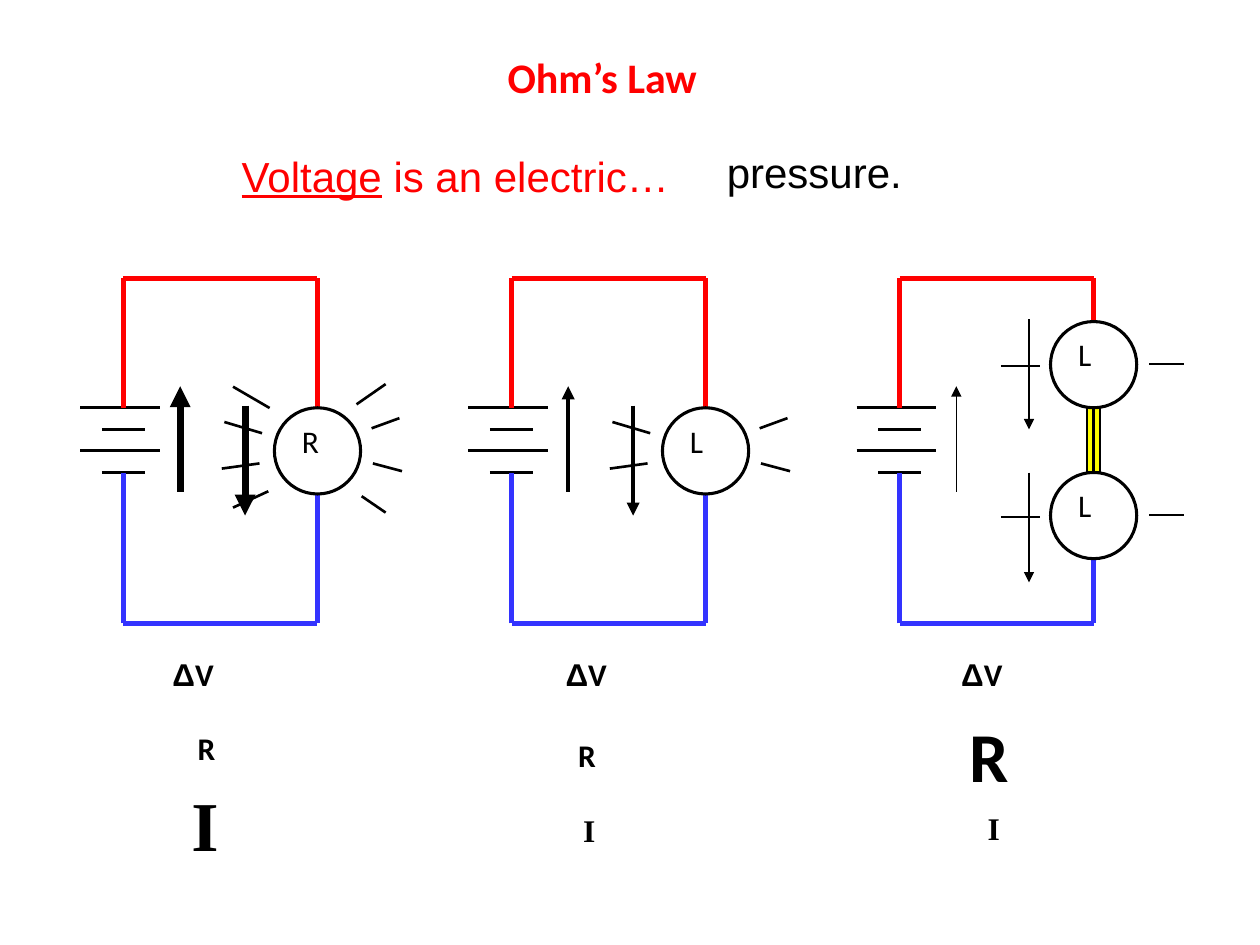
from lxml.etree import SubElement
from pptx import Presentation
from pptx.dml.color import RGBColor
from pptx.enum.shapes import MSO_CONNECTOR, MSO_SHAPE
from pptx.enum.text import MSO_ANCHOR, MSO_AUTO_SIZE
from pptx.oxml.ns import qn
from pptx.util import Inches, Pt

WIDE, HIGH = 10, 7.5
CELL = 1.54 / 9        # a circuit is 9 cells wide and 16 high
LEFT, TOP = 0.98, 2.21
PITCH = 18             # cells from one circuit to the next
RED, BLUE, BLACK, YELLOW = "FF0000", "3333FF", "000000", "FFFF00"

# Light rays as x1, y1, x2, y2 in cells from the lamp's centre
DIM = [(2.51, -1.05, 3.8, -1.52), (2.57, 0.58, 3.92, 0.94),
       (-4.32, -1.34, -2.57, -0.82), (-4.44, 0.82, -2.69, 0.58)]
BRIGHT = DIM + [(1.81, -2.16, 3.16, -3.1), (3.16, 2.86, 2.05, 2.1),
                (-2.22, -1.99, -3.92, -2.98), (-3.92, 2.63, -2.28, 1.87)]
FAINT = [(2.57, -0.03, 4.2, -0.03), (-4.3, 0.06, -2.5, 0.06)]


def color(code):
    return RGBColor.from_string(code)


class Board:
    """Draws on one slide, in cells from the top left of the current circuit."""

    def __init__(self, slide):
        self.shapes = slide.shapes
        self.left = LEFT

    def move(self, index):
        self.left = LEFT + index * PITCH * CELL

    def point(self, col, row):
        return Inches(self.left + col * CELL), Inches(TOP + row * CELL)

    def cells(self, col, row, wide, high):
        return *self.point(col, row), Inches(wide * CELL), Inches(high * CELL)

    def share(self, left, top, wide, high):
        """Turn percentages of the slide into a box."""
        return (Inches(left * WIDE / 100), Inches(top * HIGH / 100),
                Inches(wide * WIDE / 100), Inches(high * HIGH / 100))

    def line(self, x1, y1, x2, y2, width=1.75, tint=BLACK, arrow=False):
        line = self.shapes.add_connector(
            MSO_CONNECTOR.STRAIGHT, *self.point(x1, y1), *self.point(x2, y2))
        line.line.color.rgb = color(tint)
        line.line.width = Pt(width)
        if arrow:
            SubElement(line.line._get_or_add_ln(), qn("a:tailEnd"), type="triangle")
        SubElement(line._element.spPr, qn("a:effectLst"))

    def shape(self, kind, box, width, fill=None):
        shape = self.shapes.add_shape(kind, *box)
        shape.shadow.inherit = False
        shape.line.color.rgb = color(BLACK)
        shape.line.width = Pt(width)
        if fill:
            shape.fill.solid()
            shape.fill.fore_color.rgb = color(fill)
        else:
            shape.fill.background()

    def text(self, words, box, size=18, face="Calibri", tint=BLACK, bold=False,
             anchor=MSO_ANCHOR.MIDDLE):
        """Add one line of text and return its paragraph."""
        frame = self.shapes.add_textbox(*box).text_frame
        frame.word_wrap = False
        frame.auto_size = MSO_AUTO_SIZE.SHAPE_TO_FIT_TEXT
        frame.vertical_anchor = anchor
        para = frame.paragraphs[0]
        for word in words:
            para.add_run().text = word
        font = para.font
        font.size, font.name, font.bold = Pt(size), face, bold
        font.color.rgb = color(tint)
        return para

    def lamp(self, row, name, rays):
        """Draw a lamp whose top is at the given row."""
        self.shape(MSO_SHAPE.OVAL, self.cells(7, row, 4, 4), 1.75)
        for x1, y1, x2, y2 in rays:
            self.line(9 + x1, row + 2 + y1, 9 + x2, row + 2 + y2, 1.5)
        self.text([name], self.cells(7.7, row + 0.35, 2.5, 3.3),
                  anchor=MSO_ANCHOR.TOP)

    def loop(self, first, last):
        """Draw battery and wires; the lamps fill rows first to last."""
        for row in (6, 8):
            self.line(-2, row, 1.7, row)
            self.line(-1, row + 1, 1, row + 1)
        for tint, edge, pole, end in ((RED, 0, 6, first), (BLUE, 16, 9, last)):
            self.line(0, edge, 9, edge, 3, tint)
            self.line(0, edge, 0, pole, 3, tint)
            self.line(9, edge, 9, end, 3, tint)


# lamp rows, lamp name, rays, arrow width, down arrows (column, top row)
CIRCUITS = [
    ([6], "R", BRIGHT, 4, [(5.64, 5.9)]),
    ([6], "L", DIM, 2.5, [(5.64, 5.9)]),
    ([2, 9], "L", FAINT, 0.75, [(6, 1.9), (6, 9)]),
]
# left, top, width, height in percent of the slide, then text size
VOLTS = [(12.7, 67.5, 8.1, 7.6), (43.9, 67.5, 8.1, 7.6), (75.3, 67.5, 8.1, 7.6)]
OHMS = [(14.7, 76.4, 4.5, 5.4, 18), (44.9, 76.1, 5.9, 7.6, 18),
        (76, 74.7, 7.6, 10.3, 40)]
AMPS = [(14.2, 82, 5.6, 10.3, 40), (45.3, 84, 4.5, 7.6, 18),
        (77.4, 84.9, 3.6, 5.4, 18)]


def main():
    deck = Presentation()
    deck.slide_width, deck.slide_height = Inches(WIDE), Inches(HIGH)
    board = Board(deck.slides.add_slide(deck.slide_layouts[6]))

    board.text(["Ohm’s Law"], board.share(39.3, 4.8, 17.2, 6.7), 24,
               tint=RED, bold=True)
    claim = board.text(["Voltage", " is an electric…"],
                       board.share(18.2, 15.2, 37.2, 6.7), 24, "Arial", RED)
    claim.runs[0].font.underline = True
    board.text(["pressure."], board.share(56.7, 14.8, 17, 6.7), 24, "Arial")

    for index, (rows, name, rays, width, drops) in enumerate(CIRCUITS):
        board.move(index)
        board.line(2.63, 9.9, 2.63, 5, width, arrow=True)
        for col, row in drops:
            board.line(col, row, col, row + 5.1, width, arrow=True)
        if len(rows) > 1:
            board.shape(MSO_SHAPE.RECTANGLE, board.cells(8.7, 6, 0.6, 3),
                        1.25, YELLOW)
            board.line(9, 6, 9, 9)
        board.loop(rows[0], rows[-1] + 4)
        for row in rows:
            board.lamp(row, name, rays)

    for volt, (*ohm, big), (*amp, large) in zip(VOLTS, OHMS, AMPS):
        delta = board.text(["Δ", "V"], board.share(*volt), bold=True)
        delta.runs[0].font.name = "Arial"
        board.text(["R"], board.share(*ohm), big, bold=True)
        board.text(["I"], board.share(*amp), large, "Times New Roman", bold=True)

    deck.save("out.pptx")


if __name__ == "__main__":
    main()
